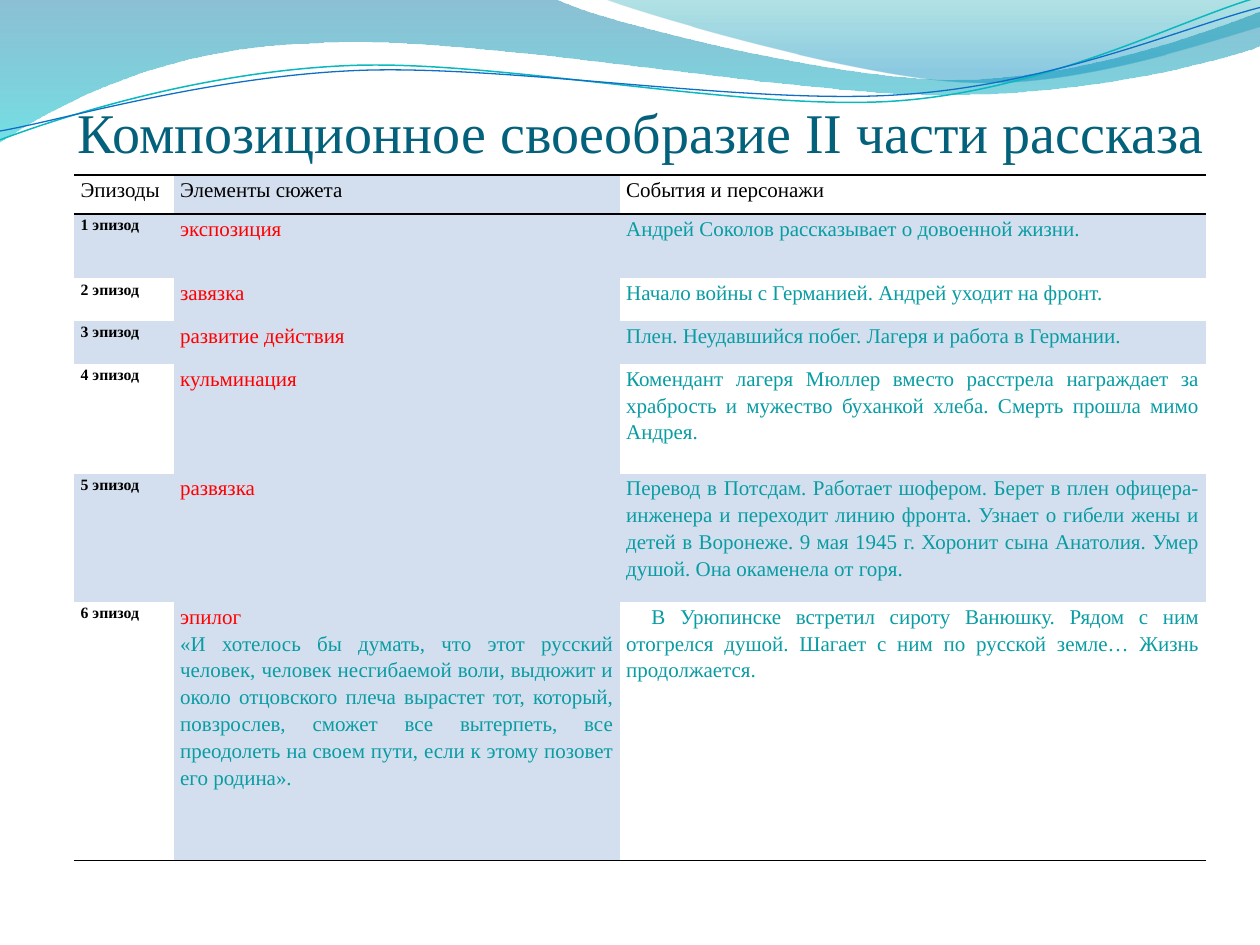
from dataclasses import dataclass
from math import cos, radians, sin

from lxml.etree import SubElement
from pptx import Presentation
from pptx.dml.color import RGBColor
from pptx.enum.text import MSO_ANCHOR, PP_ALIGN
from pptx.oxml.ns import qn
from pptx.util import Inches, Pt


@dataclass(frozen=True)
class Theme:
    font: str = "Times New Roman"
    title: str = "04617B"
    ink: str = "000000"
    element: str = "FF0000"
    event: str = "089CA3"
    band: str = "D3DFEE"
    title_size: int = 32
    body_size: int = 12
    label_size: int = 9
    rule: int = 1
    spacing: float = 1.15


THEME = Theme()
WIDTH, HEIGHT = 10, 7.5
LEFT = 0.59

TITLE = "Композиционное своеобразие II части рассказа"
HEADER = ("Эпизоды", "Элементы сюжета", "События и персонажи")
EPISODES = [
    ("экспозиция", "Андрей Соколов рассказывает о довоенной жизни."),
    ("завязка", "Начало войны с Германией. Андрей уходит на фронт."),
    ("развитие действия", "Плен. Неудавшийся побег. Лагеря и работа в Германии."),
    ("кульминация", "Комендант лагеря Мюллер вместо расстрела награждает за храбрость "
     "и мужество буханкой хлеба. Смерть прошла мимо Андрея."),
    ("развязка", "Перевод в Потсдам. Работает шофером. Берет в плен офицера-инженера "
     "и переходит линию фронта. Узнает о гибели жены и детей в Воронеже. 9 мая 1945 г. "
     "Хоронит сына Анатолия. Умер душой. Она окаменела от горя."),
    ("эпилог", "В Урюпинске встретил сироту Ванюшку. Рядом с ним отогрелся душой. "
     "Шагает с ним по русской земле… Жизнь продолжается."),
]
QUOTE = ("«И хотелось бы думать, что этот русский человек, человек несгибаемой воли, "
         "выдюжит и около отцовского плеча вырастет тот, который, повзрослев, сможет все "
         "вытерпеть, все преодолеть на своем пути, если к этому позовет его родина».")
COLUMNS = (0.79, 3.54, 4.65)
ROWS = (0.31, 0.51, 0.34, 0.34, 0.87, 1.02, 2.05)

# A path is a list of steps: 2 numbers draw a line, 6 numbers a Bezier curve.
# Gradient stops: position, colour, opacity in percent.
WAVES = [
    ([(0, 0), (4.4, -0.01), (4.76, 0.17, 6.64, 0.63, 7.58, 0.63),
      (8.53, 0.63, 9.58, 0.26, 10, 0.09), (10.01, 0.36),
      (9.83, 0.44, 8.7, 0.76, 7.46, 0.75), (6.22, 0.75, 3.82, 0.28, 2.57, 0.34),
      (1.29, 0.36, 0.46, 0.83, -0.01, 1.13)],
     [(0, "0074A1", 45), (1, "00C6CF", 55)]),
    ([(4.79, -0.01), (5.09, 0.11, 6.82, 0.62, 7.69, 0.65),
      (8.56, 0.69, 9.61, 0.32, 10, 0.21), (10, 0)],
     [(0, "00A1A9", 30), (0.8, "008BBF", 45)]),
]
# Strands are tilted about a centre.
TILT = -2.7
STRANDS = [
    ([(0, 1.11), (0.48, 0.93, 1.58, 0.57, 2.77, 0.52),
      (3.95, 0.47, 5.93, 0.89, 7.13, 0.8), (8.33, 0.71, 9.38, 0.15, 9.98, -0.02)],
     (4.99, 0.58), "0AB8BF", 0.85),
    ([(0, 1.04), (0.47, 0.96, 1.64, 0.61, 2.83, 0.56),
      (4.03, 0.51, 5.97, 0.84, 7.17, 0.75), (8.36, 0.67, 9.41, 0.21, 10, 0.06)],
     (5, 0.59), "0F6FC6", 0.75),
]


def rgb(color):
    return RGBColor.from_string(color)


def level(steps, centre):
    """Undo the tilt, which the shape's own rotation brings back."""
    cx, cy = centre
    c, n = cos(radians(-TILT)), sin(radians(-TILT))
    return [tuple(v for x, y in zip(step[::2], step[1::2])
                  for v in (cx + (x - cx) * c - (y - cy) * n,
                            cy + (x - cx) * n + (y - cy) * c))
            for step in steps]


def add_outline(s, steps, close):
    """Build a polygon through all points, then turn each triple into a Bezier curve."""
    points = [(Inches(x), Inches(y)) for step in steps
              for x, y in zip(step[::2], step[1::2])]
    builder = s.shapes.build_freeform(*points[0])
    builder.add_line_segments(points[1:], close=close)
    shape = builder.convert_to_shape()
    shape.shadow.inherit = False
    lines = shape._element.spPr.iter(qn("a:lnTo"))
    lines = iter(list(lines))
    for step in steps[1:]:
        first = next(lines)
        if len(step) == 6:
            first.tag_holder = None
            curve = SubElement(first.getparent(), qn("a:cubicBezTo"))
            first.addprevious(curve)
            for line in (first, next(lines), next(lines)):
                curve.append(line[0])
                line.getparent().remove(line)
    return shape


def add_wave(s, steps, stops):
    shape = add_outline(s, steps, True)
    shape.line.fill.background()
    shape.fill.gradient()
    shape.fill.gradient_angle = 270
    for stop, (position, color, _) in zip(shape.fill.gradient_stops, stops):
        stop.position = position
        stop.color.rgb = rgb(color)
    for clr, (_, _, opacity) in zip(shape._element.spPr.iter(qn("a:srgbClr")), stops):
        SubElement(clr, qn("a:alpha"), val=str(opacity * 1000))


def add_strand(s, steps, centre, color, weight):
    shape = add_outline(s, level(steps, centre), False)
    shape.rotation = TILT
    shape.fill.background()
    shape.line.color.rgb = rgb(color)
    shape.line.width = Pt(weight)


def style(p, size, color, bold=False):
    p.font.name = THEME.font
    p.font.size = Pt(size)
    p.font.color.rgb = rgb(color)
    p.font.bold = bold


def add_title(s):
    tf = s.shapes.add_textbox(Inches(LEFT), Inches(0.44), Inches(9), Inches(0.87)).text_frame
    tf.word_wrap = True
    tf.vertical_anchor = MSO_ANCHOR.BOTTOM
    tf.margin_left = tf.margin_right = tf.margin_bottom = 0
    p = tf.paragraphs[0]
    p.text = TITLE
    p.alignment = PP_ALIGN.CENTER
    style(p, THEME.title_size, THEME.title)


def add_rules(cell, sides):
    for side in ("lnL", "lnR", "lnT", "lnB"):
        line = SubElement(cell._tc.get_or_add_tcPr(), qn(f"a:{side}"), w=str(Pt(THEME.rule)))
        if side in sides:
            SubElement(SubElement(line, qn("a:solidFill")), qn("a:srgbClr"), val=THEME.ink)
        else:
            SubElement(line, qn("a:noFill"))


def fill_cell(cell, paragraphs, shaded, sides):
    """Each paragraph is text, size, colour and bold."""
    cell.margin_left = cell.margin_right = Inches(0.05)
    cell.margin_top = cell.margin_bottom = 0
    add_rules(cell, sides)
    if shaded:
        cell.fill.solid()
        cell.fill.fore_color.rgb = rgb(THEME.band)
    else:
        cell.fill.background()
    tf = cell.text_frame
    for i, (text, *look) in enumerate(paragraphs):
        p = tf.add_paragraph() if i else tf.paragraphs[0]
        p.text = text
        p.alignment = PP_ALIGN.JUSTIFY
        p.line_spacing = THEME.spacing
        style(p, *look)


def table_rows():
    yield [[(text, THEME.body_size, THEME.ink)] for text in HEADER]
    for n, (element, event) in enumerate(EPISODES, 1):
        yield [[(f"{n} эпизод", THEME.label_size, THEME.ink, True)],
               [(element, THEME.body_size, THEME.element)]
               + [(QUOTE, THEME.body_size, THEME.event)] * (n == len(EPISODES)),
               [(event, THEME.body_size, THEME.event)]]


def add_episodes(s):
    table = s.shapes.add_table(len(ROWS), len(COLUMNS), Inches(LEFT), Inches(1.39),
                               Inches(sum(COLUMNS)), Inches(sum(ROWS))).table
    table.first_row = table.horz_banding = False
    no_style = "{2D5ABB26-0587-4C30-8999-92F81FD0307C}"
    table._tbl.tblPr.find(qn("a:tableStyleId")).text = no_style
    for column, width in zip(table.columns, COLUMNS):
        column.width = Inches(width)
    for row, height in zip(table.rows, ROWS):
        row.height = Inches(height)
    rules = {0: ("lnT", "lnB"), 1: ("lnT",), len(ROWS) - 1: ("lnB",)}
    for r, cells in enumerate(table_rows()):
        for c, paragraphs in enumerate(cells):
            fill_cell(table.cell(r, c), paragraphs, c == 1 or r % 2 == 1, rules.get(r, ()))
    epilogue = table.cell(len(ROWS) - 1, 2).text_frame.paragraphs[0]
    epilogue._p.get_or_add_pPr().set("indent", str(Inches(0.2)))


def main():
    prs = Presentation()
    prs.slide_width, prs.slide_height = Inches(WIDTH), Inches(HEIGHT)
    s = prs.slides.add_slide(prs.slide_layouts[6])
    for wave in WAVES:
        add_wave(s, *wave)
    for strand in STRANDS:
        add_strand(s, *strand)
    add_title(s)
    add_episodes(s)
    prs.save("out.pptx")


if __name__ == "__main__":
    main()
